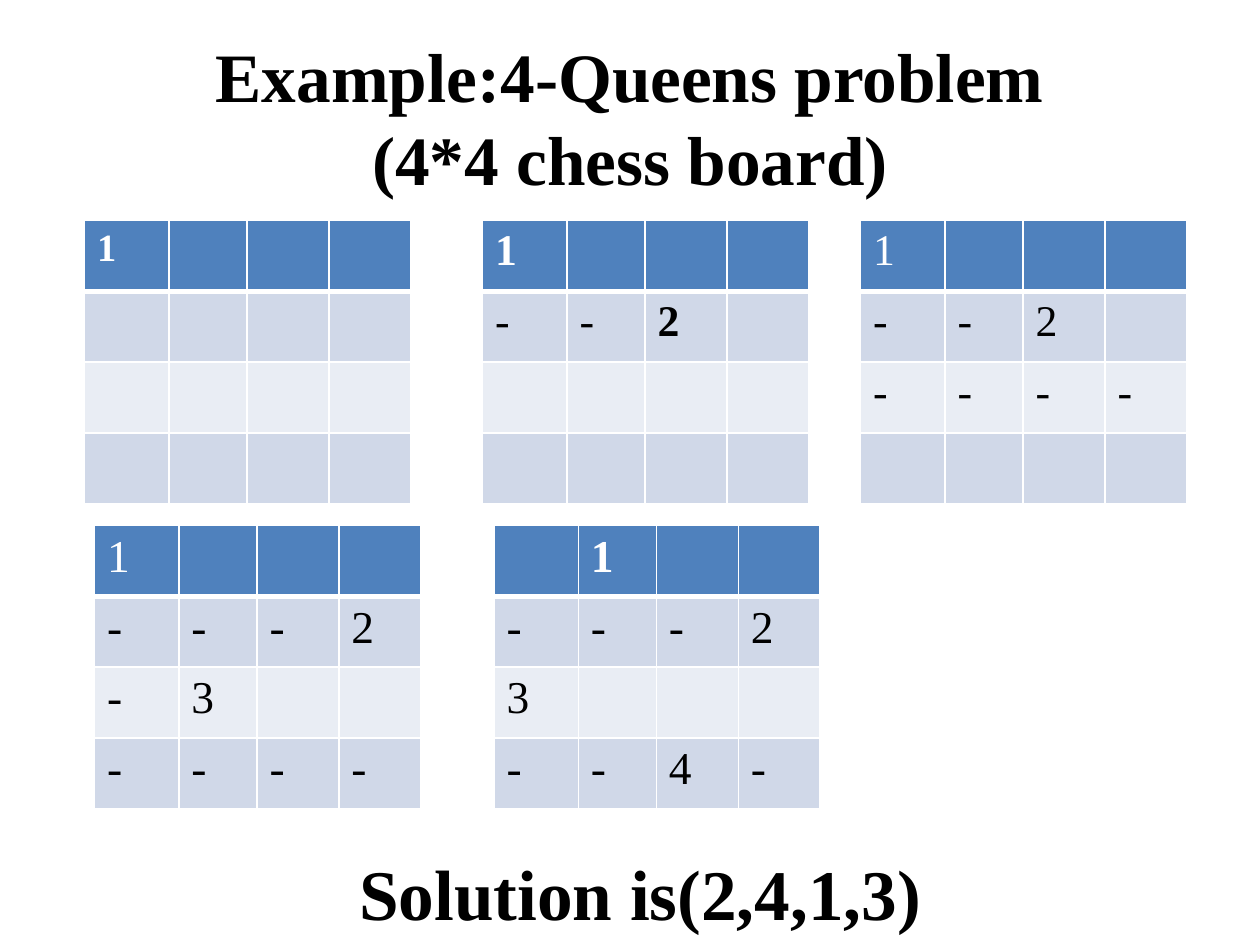
from copy import deepcopy

from lxml import etree
from pptx import Presentation
from pptx.dml.color import RGBColor
from pptx.enum.text import MSO_ANCHOR, MSO_AUTO_SIZE, PP_ALIGN
from pptx.oxml import parse_xml
from pptx.oxml.ns import nsdecls, qn
from pptx.util import Inches, Pt


def write(frame, text, size, color="000000", bold=False, align=PP_ALIGN.LEFT):
    """Fill the first paragraph; a newline becomes a line break of the same format."""
    para = frame.paragraphs[0]
    para.alignment = align
    para.text = text
    for span in para.runs:
        font = span.font
        font.name = "Times New Roman"
        font.size = Pt(size)
        font.bold = bold
        font.color.rgb = RGBColor.from_string(color)
    for line_break in para._p.findall(qn("a:br")):
        line_break.insert(0, deepcopy(para.runs[0]._r.rPr))
    return para


def set_borders(cell, bottom):
    """Draw white 1 pt borders, with a bottom border of its own width."""
    properties = cell._tc.get_or_add_tcPr()
    widths = {"lnL": 1, "lnR": 1, "lnT": 1, "lnB": bottom}
    for index, (tag, width) in enumerate(widths.items()):
        line = parse_xml(f'<a:{tag} {nsdecls("a")} w="{Pt(width)}"/>')
        fill = etree.SubElement(line, qn("a:solidFill"))
        etree.SubElement(fill, qn("a:srgbClr"), val="FFFFFF")
        properties.insert(index, line)


deck = Presentation()
deck.slide_width, deck.slide_height = Inches(10), Inches(7.5)
page = deck.slides.add_slide(deck.slide_layouts[5])

title = page.shapes.title
title.left, title.top = Inches(0.5), Inches(0.3)
title.width, title.height = Inches(9), Inches(1.25)
title.text_frame.vertical_anchor = MSO_ANCHOR.MIDDLE
title.text_frame.auto_size = MSO_AUTO_SIZE.NONE
write(title.text_frame, "Example:4-Queens problem\n(4*4 chess board)", 39.6,
      bold=True, align=PP_ALIGN.CENTER)

# Left, top, text size, bold queens, and one string per row (a dot is an empty square)
boards = [
    (0.67, 1.75, 22, "1", ["1...", "....", "....", "...."]),
    (3.83, 1.75, 25, "12", ["1...", "--2.", "....", "...."]),
    (6.83, 1.75, 25, "", ["1...", "--2.", "----", "...."]),
    (0.75, 4.17, 26, "", ["1...", "---2", "-3..", "----"]),
    (3.92, 4.17, 26, "1", [".1..", "---2", "3...", "--4-"]),
]
column_widths = [0.67, 0.62, 0.65, 0.65]
row_fills = ["4F81BD", "D0D8E8", "E9EDF4", "D0D8E8"]

for left, top, size, bold_queens, rows in boards:
    table = page.shapes.add_table(4, 4, Inches(left), Inches(top),
                                  Inches(2.58), Inches(2.25)).table
    for column, width in zip(table.columns, column_widths):
        column.width = Inches(width)
    for r, squares in enumerate(rows):
        for c, mark in enumerate(squares):
            cell = table.cell(r, c)
            cell.fill.solid()
            cell.fill.fore_color.rgb = RGBColor.from_string(row_fills[r])
            set_borders(cell, bottom=3 if r == 0 else 1)
            if mark != ".":
                write(cell.text_frame, mark, size, bold=mark in bold_queens,
                      color="FFFFFF" if r == 0 else "000000")

solution = page.shapes.add_textbox(Inches(0.58), Inches(6.75), Inches(9), Inches(0.75))
solution.text_frame.word_wrap = True
solution.text_frame.vertical_anchor = MSO_ANCHOR.MIDDLE
para = write(solution.text_frame, "Solution is(2,4,1,3)", 40.7,
             bold=True, align=PP_ALIGN.CENTER)
para.line_spacing = 0.9

deck.save("out.pptx")
